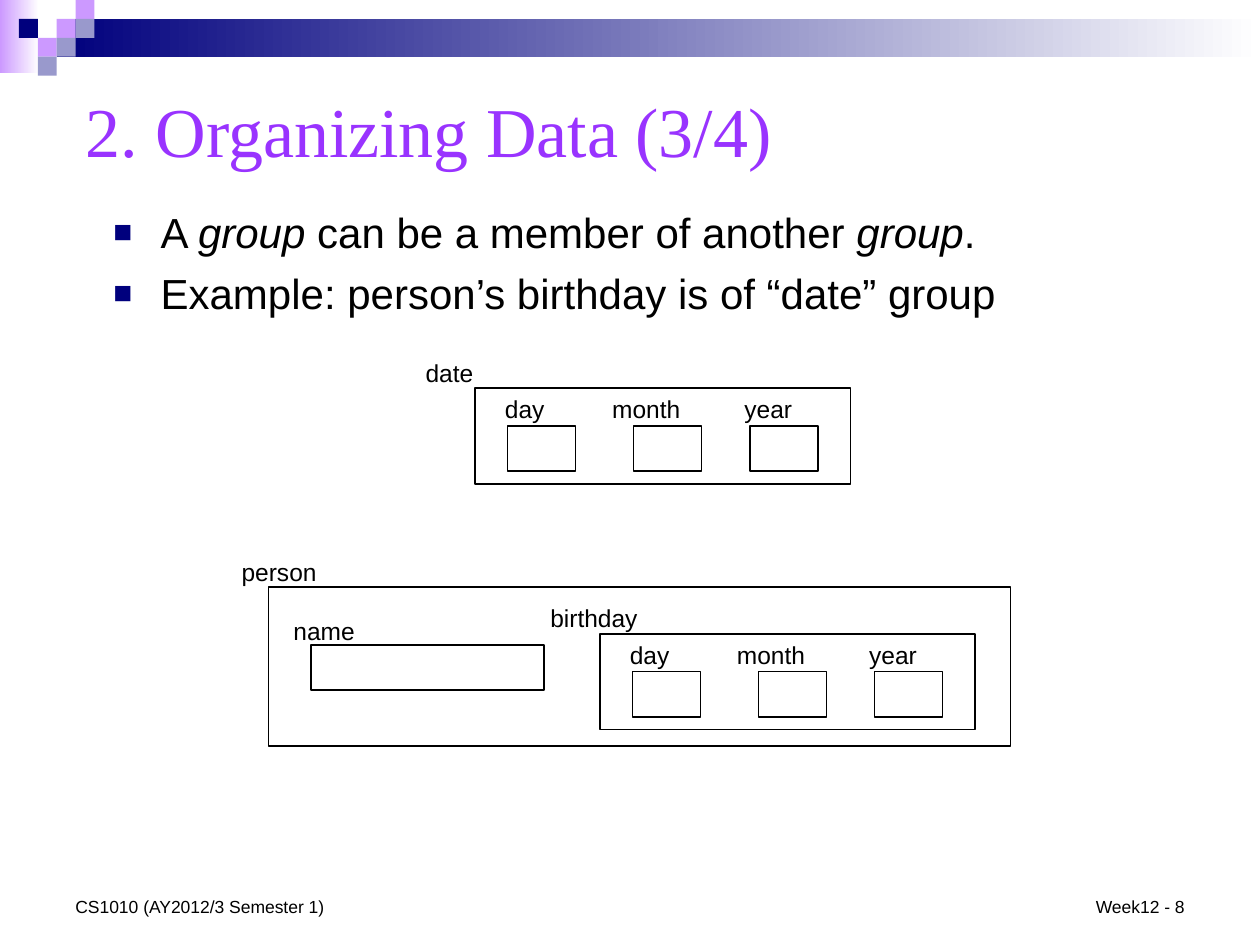
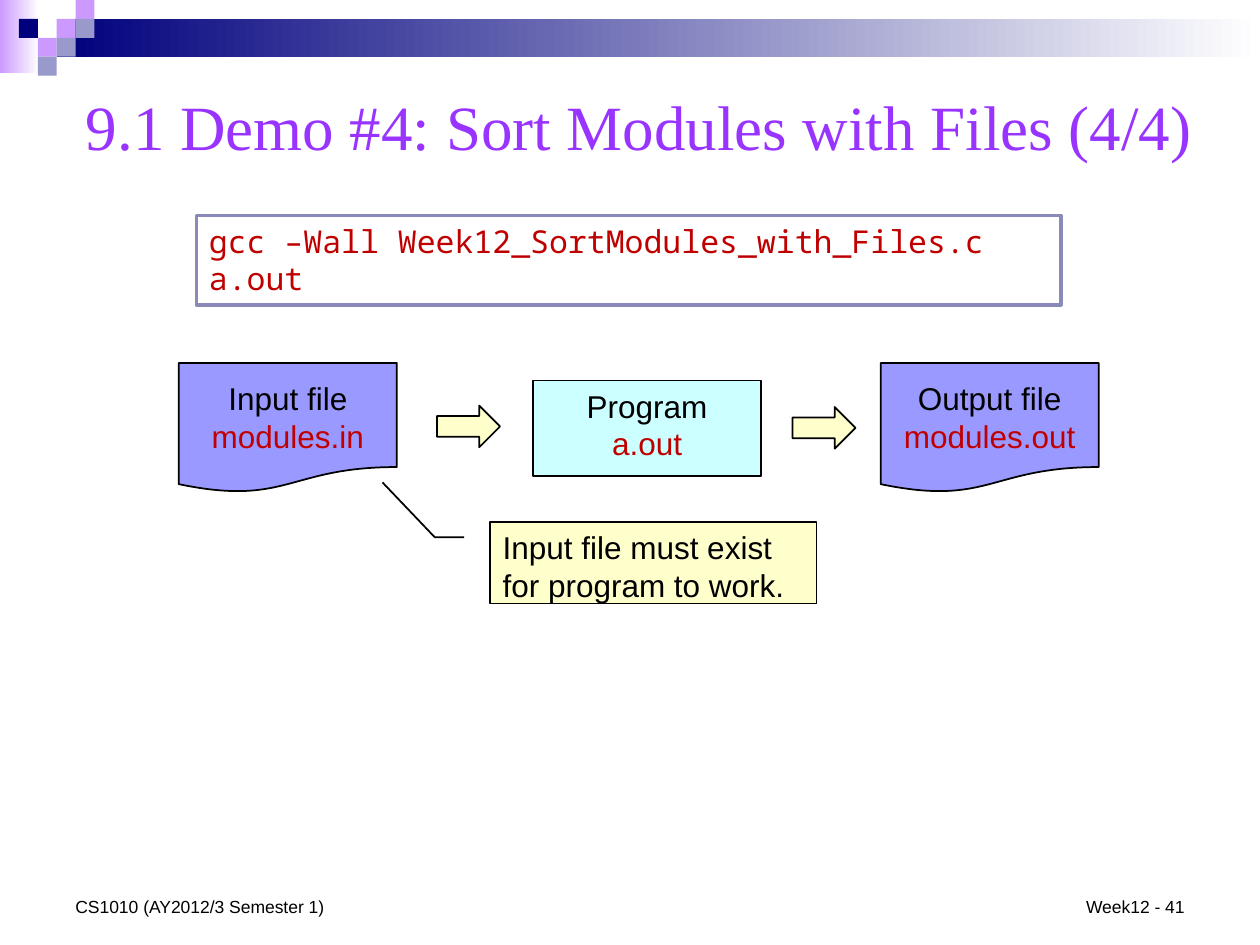
from lxml.etree import SubElement as Sub
from pptx import Presentation
from pptx.dml.color import RGBColor as Rgb
from pptx.enum.shapes import MSO_SHAPE as Kind
from pptx.enum.text import MSO_ANCHOR as Anchor, MSO_AUTO_SIZE as Fit, PP_ALIGN as Align
from pptx.oxml.ns import qn
from pptx.util import Pt


class Theme:
    black, white = Rgb(0, 0, 0), Rgb(255, 255, 255)
    navy = Rgb.from_string("00007D")
    lilac = Rgb.from_string("CC99FF")
    slate = Rgb.from_string("9999CC")
    violet = Rgb.from_string("9933FF")
    red = Rgb.from_string("C00000")
    edge = Rgb.from_string("8A8AB9")
    cyan = Rgb.from_string("CCFFFF")
    blue = Rgb.from_string("9999FF")
    cream = Rgb.from_string("FFFFCC")
    sans, serif, mono = "Arial", "Times New Roman", "Noto Sans Mono"
    list, code, label, foot = 24, 18, 14, 10


def box(slide, kind, place, fill=None, line=None, width=1):
    """Add a preset shape at place (left, top, width, height in points)."""
    shape = slide.shapes.add_shape(kind, *map(Pt, place))
    shape.shadow.inherit = False
    if fill is None:
        shape.fill.background()
    else:
        shape.fill.solid()
        shape.fill.fore_color.rgb = fill
    if line is None:
        shape.line.fill.background()
    else:
        shape.line.color.rgb = line
        shape.line.width = Pt(width)
    return shape


def write(shape, lines, size, font=Theme.sans, align=Align.LEFT, anchor=Anchor.TOP):
    """Fill a shape with (text, colour) lines, one paragraph each."""
    frame = shape.text_frame
    frame.word_wrap = True
    frame.auto_size = Fit.NONE
    frame.vertical_anchor = anchor
    for i, (text, color) in enumerate(lines):
        para = frame.add_paragraph() if i else frame.paragraphs[0]
        para.text = text
        para.alignment = align
        para.font.name, para.font.size = font, Pt(size)
        para.font.color.rgb = color


deck = Presentation()
deck.slide_width, deck.slide_height = Pt(720), Pt(540)

# Shared frame: bands, squares, title and footers
unit = 10.8
bands = [((0, 0, 22.3, 41.8), Theme.lilac), ((32.4, 10.8, 687.6, 21.6), Theme.navy)]
cells = [(3, 1, Theme.lilac), (4, 0, Theme.lilac), (4, 1, Theme.slate),
         (2, 2, Theme.lilac), (1, 1, Theme.navy), (3, 2, Theme.slate),
         (2, 3, Theme.slate)]
heads = [(1, "2. Organizing Data (3/4)", 40, (41.8, 36, 642.2, 76.3), 8),
         (5, "9.1 Demo #4: Sort Modules with Files (4/4)", 36, (41.8, 36, 658.8, 71.3), 41)]
for layout, head, size, place, page in heads:
    slide = deck.slides.add_slide(deck.slide_layouts[layout])
    for area, color in bands:
        band = box(slide, Kind.RECTANGLE, area, color)
        band.fill.gradient()
        band.fill.gradient_angle = 0
        for stop, tint in zip(band.fill.gradient_stops, (color, Theme.white)):
            stop.color.rgb = tint
    for col, row, color in cells:
        box(slide, Kind.RECTANGLE, (col * unit, row * unit, unit, unit), color)
    title = slide.shapes.title
    title.left, title.top, title.width, title.height = map(Pt, place)
    write(title, [(head, Theme.violet)], size, Theme.serif, anchor=Anchor.MIDDLE)
    for text, left, width, align in (
            ("CS1010 (AY2012/3 Semester 1)", 36, 228, Align.LEFT),
            (f"Week12 - {page}", 516, 168, Align.RIGHT)):
        foot = slide.shapes.add_textbox(Pt(left), Pt(491.8), Pt(width), Pt(36))
        write(foot, [(text, Theme.black)], Theme.foot, align=align, anchor=Anchor.BOTTOM)

data, demo = deck.slides

# Slide 1: bullets; every second run is italic
body = data.placeholders[1]
body.left, body.top, body.width, body.height = map(Pt, (57.6, 114.5, 617, 101.5))
points = [["A ", "group ", "can be a member of another ", "group", "."],
          ["Example: person’s birthday is of “date” group"]]
write(body, [("", Theme.black)] * len(points), Theme.list)
for para, parts in zip(body.text_frame.paragraphs, points):
    for i, part in enumerate(parts):
        run = para.add_run()
        run.text = part
        if i % 2:
            run.font.italic = True
    para.space_before = Pt(6)
    props = para._p.get_or_add_pPr()
    props.set("marL", str(Pt(27)))
    props.set("indent", str(-Pt(27)))
    tint = Sub(props, qn("a:buClr"))
    Sub(tint, qn("a:srgbClr"), val=str(Theme.navy))
    Sub(props, qn("a:buSzPct"), val="75000")
    Sub(props, qn("a:buFont"), typeface=Theme.sans)
    Sub(props, qn("a:buChar"), char="■")
    props.append(props.find(qn("a:defRPr")))

# Slide 1: nested records, each a frame with labelled fields
frames = [(153.4, 335.5, 424, 90.7)]
fields = [(177.8, 368.6, 133.2, 25.9)]
labels = [("person", 131, 314.6), ("name", 160.6, 348.5)]
for name, left, top in (("date", 271.4, 221.8), ("birthday", 342.7, 362.2)):
    frames.append((left, top, 214.6, 54.7))
    labels.append((name, left - 35.3, top - 20.9))
    for part, shift, gap in (("day", 10.1, 18.7), ("month", 71.3, 90.7), ("year", 146.9, 157)):
        fields.append((left + gap, top + 21.6, 38.9, 25.9))
        labels.append((part, left + shift, top))
for place in frames:
    box(data, Kind.RECTANGLE, place, line=Theme.black)
for place in fields:
    box(data, Kind.RECTANGLE, place, Theme.white, Theme.black)
for text, left, top in labels:
    label = data.shapes.add_textbox(Pt(left), Pt(top), Pt(80), Pt(24.5))
    write(label, [(text, Theme.black)], Theme.label)

# Slide 2: command, then input, program and output
shell = box(demo, Kind.RECTANGLE, (112.3, 123.1, 493.9, 51.1), Theme.white, Theme.edge, 2)
write(shell, [("gcc –Wall Week12_SortModules_with_Files.c", Theme.red), ("a.out", Theme.red)],
      Theme.code, Theme.mono)

prog = box(demo, Kind.RECTANGLE, (304.6, 217.4, 130.3, 54.7), Theme.cyan, Theme.black)
write(prog, [("Program", Theme.black), ("a.out", Theme.red)], Theme.code, align=Align.CENTER)

for head, name, left in (("Input file", "modules.in", 102.2),
                         ("Output file", "modules.out", 503.3)):
    box(demo, Kind.FLOWCHART_DOCUMENT, (left, 207.4, 124.6, 74.2), Theme.blue, Theme.black)
    text = demo.shapes.add_textbox(Pt(left - 2.9), Pt(213.1), Pt(130.3), Pt(63.4))
    write(text, [(head, Theme.black), (name, Theme.red)], Theme.code, align=Align.CENTER)

for left, top in ((249.8, 231.8), (452.9, 232.6)):
    box(demo, Kind.RIGHT_ARROW, (left, top, 36, 23.8), Theme.cream, Theme.black)

note = box(demo, Kind.LINE_CALLOUT_2, (280.1, 298.1, 186.5, 46.8), Theme.cream, Theme.black)
for i, value in enumerate((0.19, -0.08, 0.19, -0.17, -0.48, -0.33)):
    note.adjustments[i] = value
write(note, [("Input file must exist for program to work.", Theme.black)], Theme.code)

deck.save("out.pptx")
